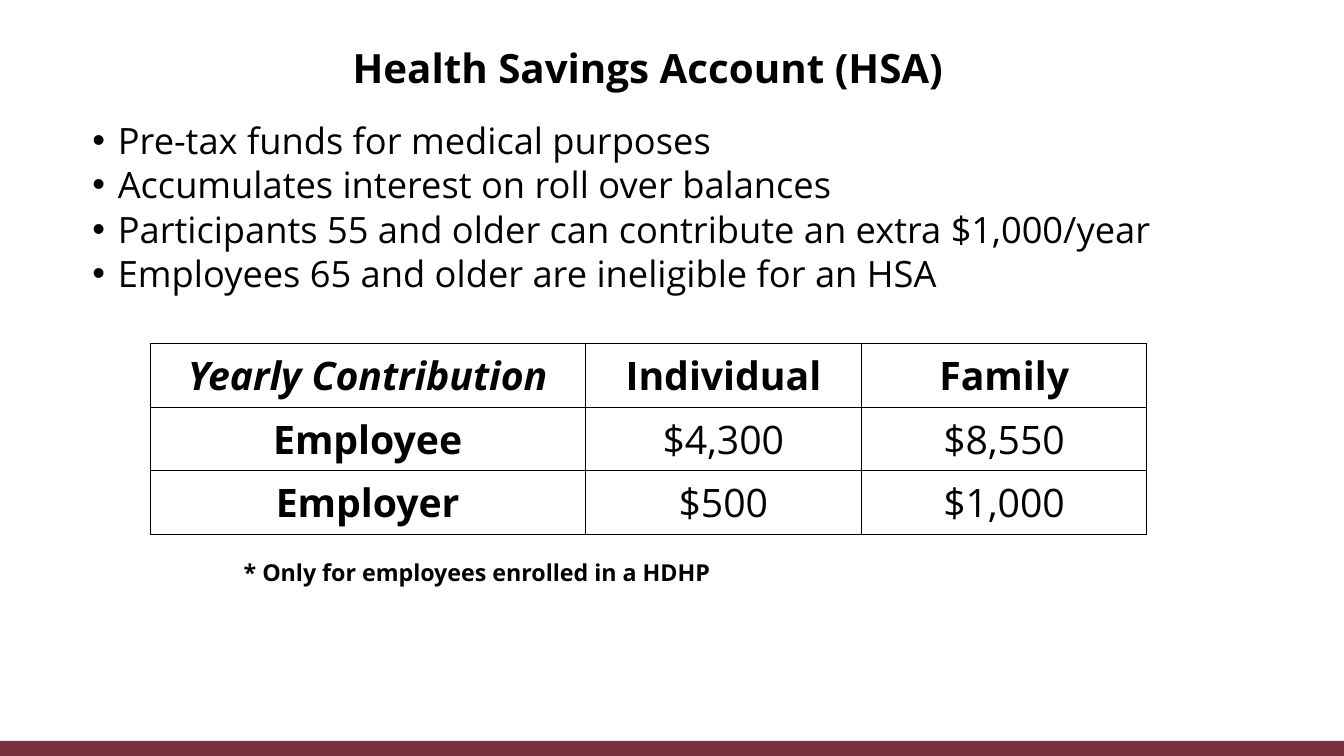
from dataclasses import dataclass
from lxml.etree import SubElement as Sub
from pptx import Presentation
from pptx.dml.color import RGBColor as RGB
from pptx.enum.shapes import MSO_SHAPE as Shape
from pptx.enum.text import MSO_ANCHOR as Anchor, PP_ALIGN as Align
from pptx.oxml.ns import qn
from pptx.util import Cm, Pt


@dataclass(frozen=True)
class Theme:
    font: str = "Open Sans"
    ink: str = "000000"
    wine: str = "782F40"
    title: float = 28.8
    body: float = 25.9
    cell: float = 28
    note: float = 16.6
    rule: float = 0.8


THEME = Theme()
WIDE, HIGH = Cm(33.87), Cm(19.05)

POINTS = [
    "Pre-tax funds for medical purposes",
    "Accumulates interest on roll over balances",
    "Participants 55 and older can contribute an extra $1,000/year",
    "Employees 65 and older are ineligible for an HSA",
]
ROWS = [
    ["Yearly Contribution", "Individual", "Family"],
    ["Employee", "$4,300", "$8,550"],
    ["Employer", "$500", "$1,000"],
]
COLS = [Cm(10.97), Cm(6.96), Cm(7.19)]
ROW = Cm(1.6)


def add_run(para, text, size, bold=False, slant=False):
    run = para.add_run()
    run.text = text
    font = run.font
    font.name, font.size = THEME.font, Pt(size)
    font.bold, font.italic = bold, slant
    font.color.rgb = RGB.from_string(THEME.ink)


def add_box(slide, left, top, width, height, anchor=Anchor.TOP):
    frame = slide.shapes.add_textbox(left, top, width, height).text_frame
    frame.word_wrap = True
    frame.vertical_anchor = anchor
    return frame


def add_line(slide, text, size, place, align, anchor=Anchor.TOP):
    para = add_box(slide, *place, anchor).paragraphs[0]
    para.alignment = align
    add_run(para, text, size, bold=True)


def add_list(slide, points, place):
    frame = add_box(slide, *place)
    for i, point in enumerate(points):
        para = frame.add_paragraph() if i else frame.paragraphs[0]
        props = para._p.get_or_add_pPr()
        props.set("marL", str(Cm(0.64)))
        props.set("indent", str(-Cm(0.64)))
        Sub(props, qn("a:buFont"), typeface="Arial")
        Sub(props, qn("a:buChar"), char="•")
        para.line_spacing = 0.8
        if i:
            para.space_before = Pt(6.8)
        add_run(para, point, THEME.body)


def add_edges(cell):
    props = cell._tc.get_or_add_tcPr()
    for side in ("lnL", "lnR", "lnT", "lnB"):
        edge = Sub(props, qn(f"a:{side}"), w=str(Pt(THEME.rule)))
        Sub(Sub(edge, qn("a:solidFill")), qn("a:srgbClr"), val=THEME.ink)


def add_grid(slide, rows, left, top):
    table = slide.shapes.add_table(
        len(rows), len(COLS), left, top, sum(COLS), ROW * len(rows)
    ).table
    table.first_row = table.horz_banding = False
    for col, width in zip(table.columns, COLS):
        col.width = width
    for r, row in enumerate(rows):
        table.rows[r].height = ROW
        for c, text in enumerate(row):
            cell = table.cell(r, c)
            add_edges(cell)
            cell.fill.background()
            cell.vertical_anchor = Anchor.MIDDLE
            para = cell.text_frame.paragraphs[0]
            para.alignment = Align.CENTER
            # Headings are bold, and the corner is also slanted
            add_run(para, text, THEME.cell, r == 0 or c == 0, r == c == 0)


def add_band(slide, height):
    band = slide.shapes.add_shape(
        Shape.RECTANGLE, 0, HIGH - height, WIDE, height)
    band.shadow.inherit = False
    band.fill.solid()
    band.fill.fore_color.rgb = RGB.from_string(THEME.wine)
    band.line.fill.background()


def main():
    deck = Presentation()
    deck.slide_width, deck.slide_height = WIDE, HIGH
    slide = deck.slides.add_slide(deck.slide_layouts[6])

    # Footer band
    add_band(slide, Cm(0.38))

    # Title and key points
    left, width = Cm(2.08), Cm(28.5)
    add_line(slide, "Health Savings Account (HSA)", THEME.title,
             (left, Cm(1.02), width, Cm(1.35)), Align.CENTER, Anchor.MIDDLE)
    add_list(slide, POINTS, (left, Cm(3.07), width, Cm(5.2)))

    # Contributions and footnote
    add_grid(slide, ROWS, Cm(3.78), Cm(8.66))
    add_line(slide, "* Only for employees enrolled in a HDHP", THEME.note,
             (Cm(5.89), Cm(13.95), Cm(24.69), Cm(1.05)), Align.LEFT)

    deck.save("out.pptx")


if __name__ == "__main__":
    main()
